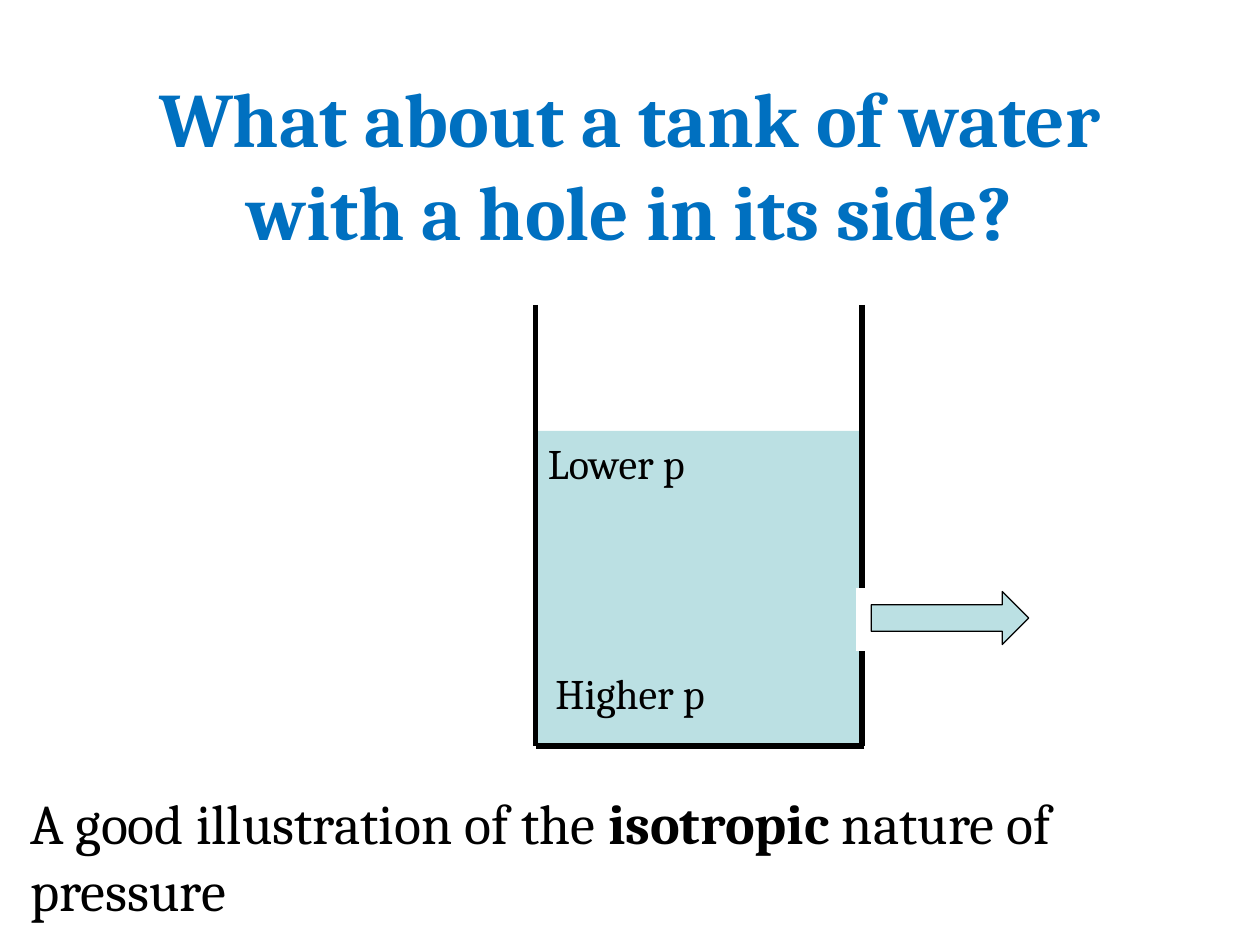
"""Build a slide on the pressure in a tank of water with a hole in its side."""
from pptx import Presentation
from pptx.dml.color import RGBColor
from pptx.enum.shapes import MSO_CONNECTOR, MSO_SHAPE
from pptx.enum.text import MSO_ANCHOR, MSO_AUTO_SIZE, PP_ALIGN
from pptx.oxml.ns import qn
from pptx.util import Inches, Pt
from lxml.etree import SubElement

COLORS = {"title": "0070C0", "water": "BBE0E3", "ink": "000000", "gap": "FFFFFF"}


class Sketch:
    font = "Cambria"

    def __init__(self, slide):
        self.slide = slide

    def color(self, name):
        return RGBColor.from_string(COLORS[name])

    def fill_text(self, shape, parts, size, color="ink", align=PP_ALIGN.LEFT,
                  anchor=MSO_ANCHOR.TOP, wrap=True):
        frame = shape.text_frame
        frame.auto_size = MSO_AUTO_SIZE.NONE
        frame.word_wrap = wrap
        frame.vertical_anchor = anchor
        para = frame.paragraphs[0]
        para.alignment = align
        for text, bold in parts:
            run = para.add_run()
            run.text = text
            run.font.name = self.font
            run.font.size = Pt(size)
            run.font.bold = bold
            run.font.color.rgb = self.color(color)

    def title(self, text, box):
        shape = self.slide.shapes.title
        shape.left, shape.top, shape.width, shape.height = map(Inches, box)
        self.fill_text(shape, [(text, True)], 44, "title", PP_ALIGN.CENTER,
                       MSO_ANCHOR.MIDDLE)

    def label(self, parts, box, size, wrap=True):
        shape = self.slide.shapes.add_textbox(*map(Inches, box))
        self.fill_text(shape, parts, size, wrap=wrap)

    def block(self, kind, box, line=None):
        shape = self.slide.shapes.add_shape(kind, *map(Inches, box))
        shape.shadow.inherit = False
        shape.fill.solid()
        shape.fill.fore_color.rgb = self.color("water")
        if line:
            shape.line.color.rgb = self.color("ink")
            shape.line.width = Pt(line)
        else:
            shape.line.fill.background()
        return shape

    def wall(self, start, end, color="ink", width=3.25):
        line = self.slide.shapes.add_connector(
            MSO_CONNECTOR.STRAIGHT, *map(Inches, start + end))
        line.line.color.rgb = self.color(color)
        line.line.width = Pt(width)
        SubElement(line._element.spPr, qn("a:effectLst"))


def main():
    deck = Presentation()
    deck.slide_width, deck.slide_height = Inches(10), Inches(7.5)
    sketch = Sketch(deck.slides.add_slide(deck.slide_layouts[5]))
    left, right, top, base = 4.25, 6.84, 2.42, 5.92

    sketch.title("What about a tank of water with a hole in its side?",
                 (0.75, 0.67, 8.5, 1.25))
    water = sketch.block(MSO_SHAPE.RECTANGLE, (left, 3.42, 2.58, 2.5))
    sketch.fill_text(water, [("Lower p", False)], 24)
    for side in (left, right):
        sketch.wall((side, top), (side, base))
    sketch.wall((6.86, base), (left, base))
    sketch.label([("Higher p", False)], (4.31, 5.25, 1.39, 0.51), 24, wrap=False)
    sketch.wall((6.83, 4.67), (6.83, 5.17), "gap", 5.75)
    jet = sketch.block(MSO_SHAPE.UP_ARROW, (7.33, 4.28, 0.42, 1.25), 0.75)
    jet.rotation = 90
    sketch.label([("A good illustration of the ", False), ("isotropic", True),
                  (" nature of pressure", False)], (0.14, 6.21, 9.73, 0.64), 32)
    deck.save("out.pptx")


if __name__ == "__main__":
    main()
